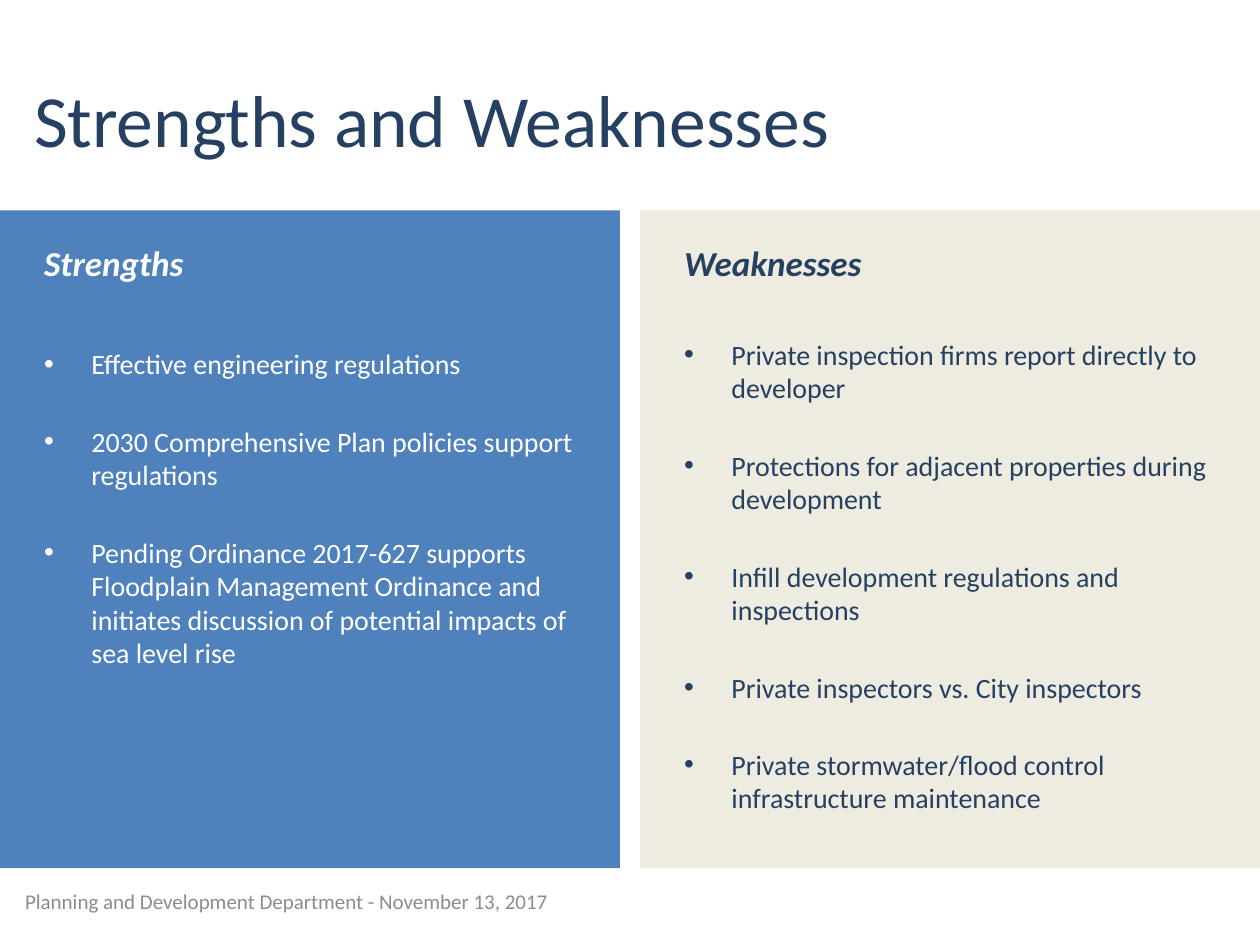
from pptx import Presentation
from pptx import util as u
from pptx.dml.color import RGBColor
from pptx.enum import shapes, text
from pptx.oxml.ns import qn
from lxml import etree

NAVY = RGBColor(0x25, 0x40, 0x61)
BLUE = RGBColor(0x4F, 0x81, 0xBD)
CREAM = RGBColor(0xEE, 0xEC, 0xE1)
WHITE = RGBColor(0xFF, 0xFF, 0xFF)
GRAY = RGBColor(0x8C, 0x8C, 0x8C)
FONT = "Calibri"

STRENGTHS = [
    "Effective engineering regulations",
    "2030 Comprehensive Plan policies support regulations",
    "Pending Ordinance 2017-627 supports Floodplain Management Ordinance "
    "and initiates discussion of potential impacts of sea level rise",
]
WEAKNESSES = [
    "Private inspection firms report directly to developer",
    "Protections for adjacent properties during development",
    "Infill development regulations and inspections",
    "Private inspectors vs. City inspectors",
    "Private stormwater/flood control infrastructure maintenance",
]


def place(sp, left, top, width, height):
    """Move a shape to a box."""
    sp.left, sp.top, sp.width, sp.height = left, top, width, height


def style(p, size, color, emphasis=False):
    """Format the runs of a paragraph."""
    for r in p.runs:
        r.font.name, r.font.size = FONT, u.Pt(size)
        r.font.color.rgb = color
        r.font.bold = r.font.italic = emphasis


def write_line(sp, line, size, color):
    """Put one left-aligned, vertically centred line into a shape."""
    tf = sp.text_frame
    tf.text = line
    tf.word_wrap = True
    tf.auto_size = text.MSO_AUTO_SIZE.NONE
    tf.vertical_anchor = text.MSO_ANCHOR.MIDDLE
    tf.paragraphs[0].alignment = text.PP_ALIGN.LEFT
    style(tf.paragraphs[0], size, color)


def add_title(s, left, top, width, height):
    """Fill the title placeholder."""
    place(s.shapes.title, left, top, width, height)
    write_line(s.shapes.title, "Strengths and Weaknesses", 42, NAVY)


def add_footer(s, left, top, width, height):
    """Add the department and date line."""
    sp = s.shapes.add_textbox(left, top, width, height)
    write_line(sp, "Planning and Development Department - November 13, 2017", 12, GRAY)


def add_column(s, body, left, top, width, height, heading, items, fill, color, first_gap):
    """Draw a coloured panel with a heading and bullets in its body placeholder."""
    panel = s.shapes.add_shape(shapes.MSO_SHAPE.RECTANGLE, left, top, width, height)
    panel.shadow.inherit = False
    panel.fill.solid()
    panel.fill.fore_color.rgb = fill
    panel.line.fill.background()
    s.shapes.title.element.addprevious(panel.element)

    place(body, left + u.Inches(0.25), top + u.Inches(0.2),
          width - u.Inches(0.5), height - u.Inches(0.27))
    tf = body.text_frame
    tf.auto_size = text.MSO_AUTO_SIZE.NONE
    p = tf.paragraphs[0]
    p.text = heading
    p.space_before = u.Pt(0)
    pPr = p._p.get_or_add_pPr()
    pPr.set("marL", "0")
    pPr.set("indent", "0")
    etree.SubElement(pPr, qn("a:buNone"))
    style(p, 20, color, emphasis=True)
    for i, item in enumerate(items):
        p = tf.add_paragraph()
        p.text = item
        p.space_before = u.Pt(25 if i else first_gap)
        style(p, 16, color)


def main():
    """Build the slide and save it."""
    prs = Presentation()
    prs.slide_width, prs.slide_height = u.Inches(10), u.Inches(7.5)
    s = prs.slides.add_slide(prs.slide_layouts[3])
    add_title(s, u.Inches(0.17), u.Inches(0.38), u.Inches(9.67), u.Inches(1.12))
    top, width, height = u.Inches(1.67), u.Inches(4.92), u.Inches(5.22)
    add_column(s, s.placeholders[1], 0, top, width, height,
               "Strengths", STRENGTHS, BLUE, WHITE, 36)
    add_column(s, s.placeholders[2], prs.slide_width - width, top, width, height,
               "Weaknesses", WEAKNESSES, CREAM, NAVY, 30.5)
    add_footer(s, u.Inches(0.1), u.Inches(6.95), width, u.Inches(0.4))
    prs.save("out.pptx")


if __name__ == "__main__":
    main()
